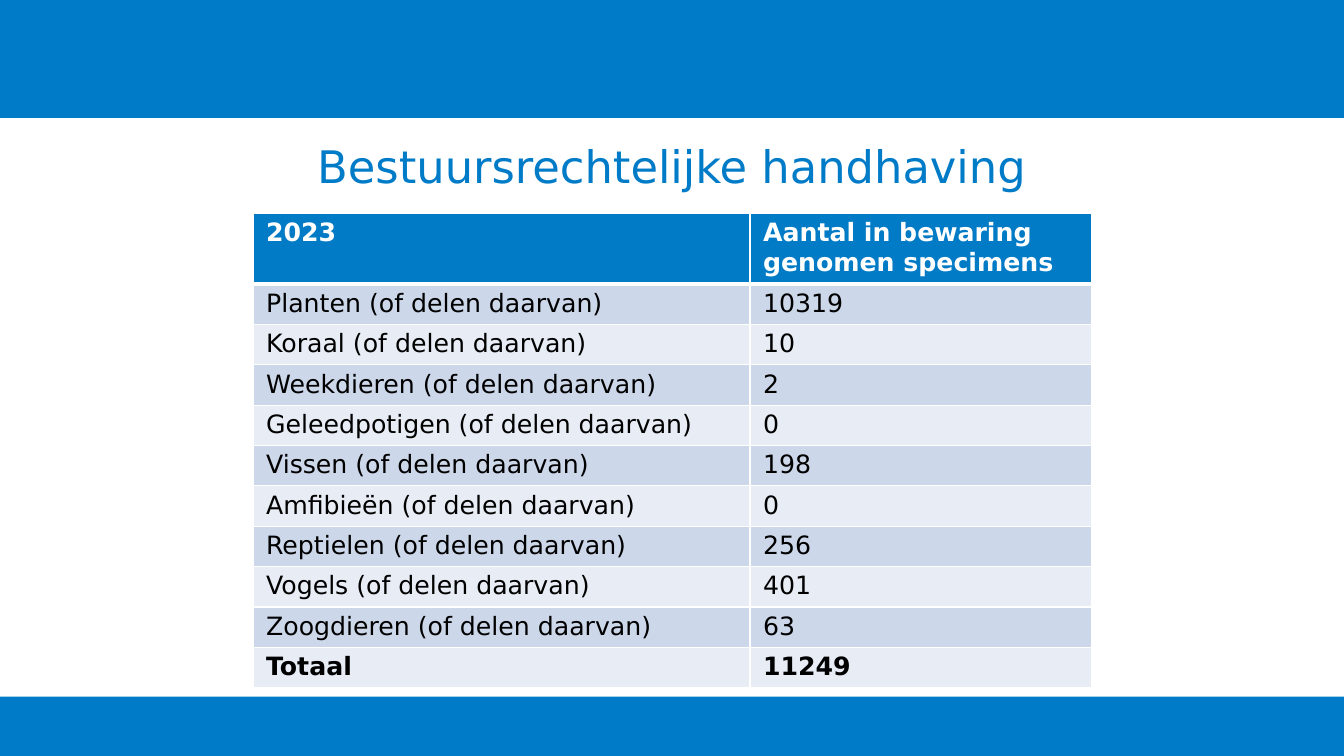
from lxml.etree import SubElement
from pptx import Presentation
from pptx.dml.color import RGBColor
from pptx.enum.shapes import MSO_SHAPE
from pptx.enum.text import MSO_ANCHOR, PP_ALIGN
from pptx.oxml.ns import qn
from pptx.util import Pt

BLUE = RGBColor(0x00, 0x7B, 0xC7)
HEADER_BLUE = RGBColor(0x01, 0x7B, 0xC6)
BAND_DARK = RGBColor(0xCC, 0xD7, 0xEA)
BAND_LIGHT = RGBColor(0xE7, 0xEC, 0xF5)
WHITE = RGBColor(0xFF, 0xFF, 0xFF)
BLACK = RGBColor(0x00, 0x00, 0x00)
FONT = "DejaVu Sans"
SLIDE_W, SLIDE_H = 960, 540
COL_WIDTHS = (355, 244)
HEADER_H, ROW_H = 48.5, 28.1

HEADER = ("2023", "Aantal in bewaring genomen specimens")
SPECIMENS = (
    ("Planten", 10319),
    ("Koraal", 10),
    ("Weekdieren", 2),
    ("Geleedpotigen", 0),
    ("Vissen", 198),
    ("Amfibieën", 0),
    ("Reptielen", 256),
    ("Vogels", 401),
    ("Zoogdieren", 63),
)


def set_text(tf, text, size=18, color=BLACK, bold=False, align=PP_ALIGN.LEFT, spacing=1.0):
    """Write one formatted paragraph into a text frame."""
    tf.word_wrap = True
    p = tf.paragraphs[0]
    p.alignment = align
    p.line_spacing = spacing
    r = p.add_run()
    r.text = text
    r.font.name = FONT
    r.font.size = Pt(size)
    r.font.bold = bold
    r.font.color.rgb = color


def add_band(s, top, height):
    """Add a full-width blue band."""
    sp = s.shapes.add_shape(MSO_SHAPE.RECTANGLE, 0, Pt(top), Pt(SLIDE_W), Pt(height))
    sp.shadow.inherit = False
    sp.fill.solid()
    sp.fill.fore_color.rgb = BLUE
    sp.line.fill.background()


def add_title(s, text):
    """Add the centred slide title on white."""
    sp = s.shapes.add_textbox(Pt(26.5), Pt(100), Pt(907), Pt(68))
    sp.fill.solid()
    sp.fill.fore_color.rgb = WHITE
    sp.text_frame.vertical_anchor = MSO_ANCHOR.TOP
    set_text(sp.text_frame, text, size=32, color=BLUE, align=PP_ALIGN.CENTER, spacing=0.9)


def set_borders(cell, top, bottom):
    """Draw white cell borders with the given top and bottom widths."""
    tc_pr = cell._tc.get_or_add_tcPr()
    for side, width in (("L", 1), ("R", 1), ("T", top), ("B", bottom)):
        ln = SubElement(tc_pr, qn(f"a:ln{side}"), w=str(Pt(width)))
        fill = SubElement(ln, qn("a:solidFill"))
        SubElement(fill, qn("a:srgbClr"), val=str(WHITE))


def format_cell(cell, text, row, bold):
    """Fill, border and write one table cell."""
    set_borders(cell, top=3 if row == 1 else 1, bottom=3 if row == 0 else 1)
    cell.margin_left = cell.margin_right = Pt(9.4)
    cell.margin_top = cell.margin_bottom = Pt(3.6)
    cell.fill.solid()
    cell.fill.fore_color.rgb = HEADER_BLUE if row == 0 else (BAND_LIGHT, BAND_DARK)[row % 2]
    set_text(cell.text_frame, text, color=WHITE if row == 0 else BLACK, bold=bold)


def add_specimen_table(s):
    """Add the table of specimens with its header and total."""
    rows = [HEADER]
    rows += [(f"{name} (of delen daarvan)", str(count)) for name, count in SPECIMENS]
    rows.append(("Totaal", str(sum(count for _, count in SPECIMENS))))
    height = HEADER_H + ROW_H * (len(rows) - 1)
    table = s.shapes.add_table(
        len(rows), len(COL_WIDTHS), Pt(180.7), Pt(152.5), Pt(sum(COL_WIDTHS)), Pt(height)
    ).table
    for col, width in zip(table.columns, COL_WIDTHS):
        col.width = Pt(width)
    for i, values in enumerate(rows):
        table.rows[i].height = Pt(ROW_H if i else HEADER_H)
        for j, value in enumerate(values):
            format_cell(table.cell(i, j), value, i, bold=i in (0, len(rows) - 1))


def main():
    """Build and save the slide."""
    prs = Presentation()
    prs.slide_width, prs.slide_height = Pt(SLIDE_W), Pt(SLIDE_H)
    s = prs.slides.add_slide(prs.slide_layouts[6])
    add_band(s, 497.5, 42.5)
    add_band(s, 0, 84.2)
    add_title(s, "Bestuursrechtelijke handhaving")
    add_specimen_table(s)
    prs.save("out.pptx")


if __name__ == "__main__":
    main()
